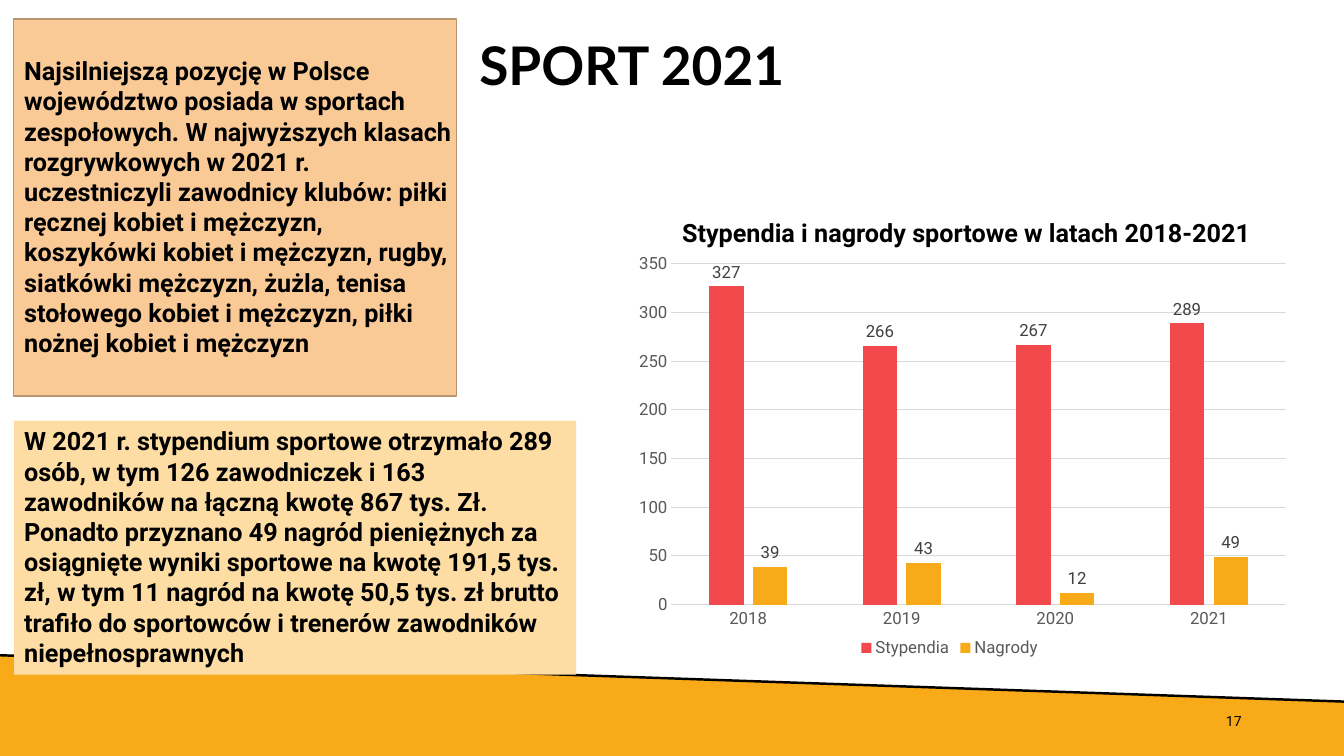
"""Builds the SPORT 2021 slide with two text panels and a column chart."""
from lxml import etree
from pptx import Presentation
from pptx.chart.data import CategoryChartData
from pptx.dml.color import RGBColor
from pptx.enum.chart import XL_CHART_TYPE, XL_LABEL_POSITION, XL_LEGEND_POSITION, XL_TICK_MARK
from pptx.enum.shapes import MSO_CONNECTOR, MSO_SHAPE
from pptx.enum.text import MSO_ANCHOR, PP_ALIGN
from pptx.oxml import parse_xml
from pptx.oxml.ns import nsdecls, qn
from pptx.util import Cm, Pt

BLACK = RGBColor(0x00, 0x00, 0x00)
AMBER = RGBColor(0xF9, 0xAA, 0x19)
RED = RGBColor(0xF2, 0x49, 0x4C)
PEACH = RGBColor(0xF9, 0xC9, 0x96)
BROWN = RGBColor(0xB8, 0x95, 0x6F)
CREAM = RGBColor(0xFD, 0xDD, 0xA3)
GRID = RGBColor(0xD9, 0xD9, 0xD9)
AXIS_TEXT = RGBColor(0x59, 0x59, 0x59)
LABEL_TEXT = RGBColor(0x40, 0x40, 0x40)

LEFT, CENTER, RIGHT = PP_ALIGN.LEFT, PP_ALIGN.CENTER, PP_ALIGN.RIGHT
TOP, MIDDLE = MSO_ANCHOR.TOP, MSO_ANCHOR.MIDDLE
RECT = MSO_SHAPE.RECTANGLE
STRAIGHT = MSO_CONNECTOR.STRAIGHT
COLUMNS = XL_CHART_TYPE.COLUMN_CLUSTERED
OUTSIDE_END = XL_LABEL_POSITION.OUTSIDE_END
BOTTOM = XL_LEGEND_POSITION.BOTTOM
NO_TICK = XL_TICK_MARK.NONE

TEAMS = (
    "Najsilniejszą pozycję w Polsce województwo posiada w sportach zespołowych. "
    "W najwyższych klasach rozgrywkowych w 2021 r. uczestniczyli zawodnicy klubów: "
    "piłki ręcznej kobiet i mężczyzn, koszykówki kobiet i mężczyzn, rugby, "
    "siatkówki mężczyzn, żużla, tenisa stołowego kobiet i mężczyzn, "
    "piłki nożnej kobiet i mężczyzn"
)
GRANTS = (
    "W 2021 r. stypendium sportowe otrzymało 289 osób, w tym 126 zawodniczek "
    "i 163 zawodników na łączną kwotę 867 tys. Zł. Ponadto przyznano 49 nagród "
    "pieniężnych za osiągnięte wyniki sportowe na kwotę 191,5 tys. zł, w tym "
    "11 nagród na kwotę 50,5 tys. zł brutto trafiło do sportowców i trenerów "
    "zawodników niepełnosprawnych"
)


def set_font(font, size, color, bold=False, name="Roboto"):
    values = {"size": Pt(size), "bold": bold, "name": name}
    for key, value in values.items():
        setattr(font, key, value)
    font.color.rgb = color


def write(s, text, size, bold=True, name="Roboto", align=LEFT, anchor=TOP):
    tf = s.text_frame
    tf.word_wrap = True
    tf.vertical_anchor = anchor
    p = tf.paragraphs[0]
    p.alignment = align
    r = p.add_run()
    r.text = text
    set_font(r.font, size, BLACK, bold, name)
    return p


prs = Presentation()
prs.slide_width, prs.slide_height = Cm(33.87), Cm(19.05)
slide = prs.slides.add_slide(prs.slide_layouts[6])
sp = slide.shapes

builder = sp.build_freeform(Cm(33.9), Cm(17.68))
builder.add_line_segments(
    [(Cm(-0.03), Cm(16.51)), (Cm(-0.03), Cm(19.05)), (Cm(33.9), Cm(19.12))]
)
footer = builder.convert_to_shape()
footer.shadow.inherit = False
footer.fill.solid()
footer.fill.fore_color.rgb = AMBER
footer.line.fill.background()

edge = sp.add_connector(STRAIGHT, Cm(-0.03), Cm(16.51), Cm(33.9), Cm(17.68))
edge.line.color.rgb = BLACK
edge.line.width = Pt(1.75)
etree.SubElement(edge.element.spPr, qn("a:effectLst"))

panels = []
for x, y, w, h, color in (
    (0.34, 0.48, 11.16, 9.5, PEACH),
    (0.36, 10.6, 14.16, 6.4, CREAM),
):
    s = sp.add_shape(RECT, Cm(x), Cm(y), Cm(w), Cm(h))
    s.shadow.inherit = False
    s.fill.solid()
    s.fill.fore_color.rgb = color
    s.line.fill.background()
    panels.append(s)
teams_panel, grants_panel = panels
teams_panel.line.color.rgb = BROWN
teams_panel.line.width = Pt(1)
write(grants_panel, GRANTS, 18)

title = sp.add_textbox(Cm(1.32), Cm(-0.13), Cm(29.21), Cm(3.68))
p = write(title, "SPORT 2021", 38, name="Lato", align=CENTER, anchor=MIDDLE)
p.line_spacing = 0.9

number = sp.add_textbox(Cm(23.92), Cm(17.66), Cm(7.62), Cm(1.01))
write(number, "17", 10, bold=False, align=RIGHT, anchor=MIDDLE)

teams = sp.add_textbox(Cm(0.36), Cm(1.27), Cm(11.43), Cm(7.95))
write(teams, TEAMS, 18)

data = CategoryChartData()
data.categories = ["2018", "2019", "2020", "2021"]
data.add_series("Stypendia", (327, 266, 267, 289))
data.add_series("Nagrody", (39, 43, 12, 49))
chart = sp.add_chart(COLUMNS, Cm(15.32), Cm(5.66), Cm(17.22), Cm(11.02), data).chart
set_font(chart.font, 10, BLACK)
chart.has_title = False
chart.has_legend = True
chart.legend.position = BOTTOM
chart.legend.include_in_layout = False
set_font(chart.legend.font, 12, AXIS_TEXT)

for axis in (chart.category_axis, chart.value_axis):
    axis.major_tick_mark = axis.minor_tick_mark = NO_TICK
    set_font(axis.tick_labels.font, 12, AXIS_TEXT)
value_axis = chart.value_axis
for key, value in {"minimum_scale": 0, "maximum_scale": 350, "major_unit": 50}.items():
    setattr(value_axis, key, value)
value_axis.format.line.fill.background()
for line in (chart.category_axis.format.line, value_axis.major_gridlines.format.line):
    line.color.rgb = GRID
    line.width = Pt(0.75)

plot = chart.plots[0]
plot.gap_width, plot.overlap = 219, -27
plot.vary_by_categories = False
for series, color in zip(plot.series, (RED, AMBER)):
    series.format.fill.solid()
    series.format.fill.fore_color.rgb = color
    labels = series.data_labels
    labels.show_value = True
    labels.position = OUTSIDE_END
    set_font(labels.font, 12, LABEL_TEXT)

plot_area = chart.element.find(".//" + qn("c:plotArea"))
for old in plot_area.findall(qn("c:layout")):
    plot_area.remove(old)
layout = parse_xml(
    f'<c:layout {nsdecls("c")}><c:manualLayout><c:layoutTarget val="inner"/>'
    '<c:xMode val="edge"/><c:yMode val="edge"/><c:x val="0.093"/><c:y val="0.09"/>'
    '<c:w val="0.899"/><c:h val="0.779"/></c:manualLayout></c:layout>'
)
plot_area.insert(0, layout)

heading = sp.add_textbox(Cm(16.94), Cm(5.36), Cm(15.67), Cm(1.02))
write(heading, "Stypendia i nagrody sportowe w latach 2018-2021", 18)

prs.save("out.pptx")
